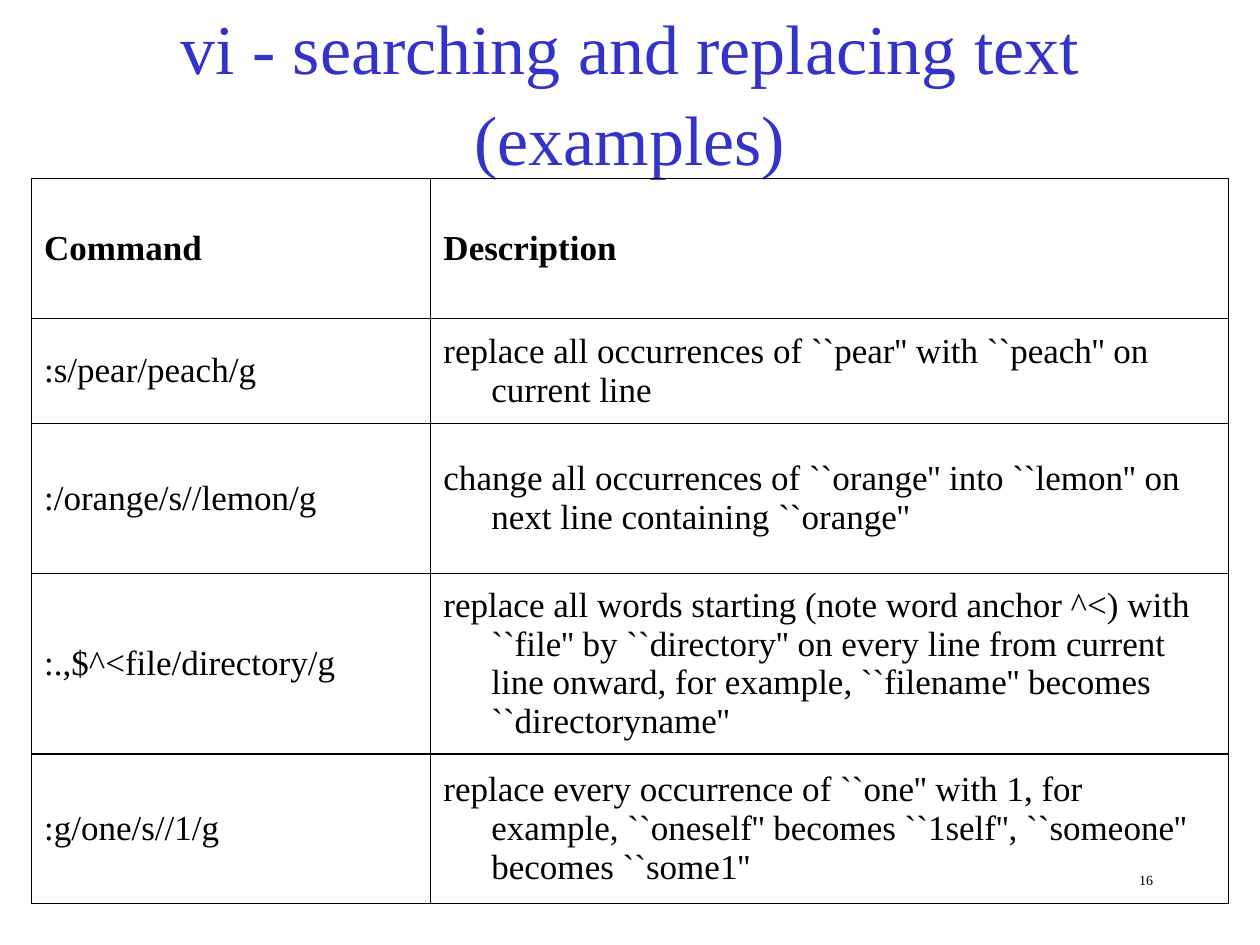
from dataclasses import dataclass

from lxml import etree
from pptx import Presentation
from pptx.dml.color import RGBColor
from pptx.enum import text
from pptx.oxml import ns
from pptx.util import Inches, Pt


@dataclass(frozen=True)
class Theme:
    font: str = "Times New Roman"
    ink: str = "000000"
    heading: str = "3333CC"
    title_size: float = 40
    body_size: float = 20
    number_size: float = 8
    border_width: float = 0.75


THEME = Theme()
COLUMNS = (3.17, 6.33)
ROW_HEIGHTS = (1.11, 0.83, 1.19, 1.39, 1.19)
COMMANDS = (
    ("Command", "Description"),
    (":s/pear/peach/g",
     "replace all occurrences of ``pear'' with ``peach'' on current line"),
    (":/orange/s//lemon/g",
     "change all occurrences of ``orange'' into ``lemon'' on next line "
     "containing ``orange''"),
    (":.,$^<file/directory/g",
     "replace all words starting (note word anchor ^<) with ``file'' by "
     "``directory'' on every line from current line onward, for example, "
     "``filename'' becomes ``directoryname''"),
    (":g/one/s//1/g",
     "replace every occurrence of ``one'' with 1, for example, ``oneself'' "
     "becomes ``1self'', ``someone'' becomes ``some1''"),
)


def write(frame, words, size, color, align, bold=False):
    frame.text = words
    frame.word_wrap = True
    para = frame.paragraphs[0]
    para.alignment = align
    font = para.runs[0].font
    font.name, font.size, font.bold = THEME.font, Pt(size), bold
    font.color.rgb = RGBColor.from_string(color)
    return para


def add_title(page, left, top, width, height):
    title = page.shapes.title
    title.left, title.top = Inches(left), Inches(top)
    title.width, title.height = Inches(width), Inches(height)
    para = write(title.text_frame, "vi - searching and replacing text (examples)",
                 THEME.title_size, THEME.heading, text.PP_ALIGN.CENTER)
    para.line_spacing = 1.08
    title.text_frame.auto_size = text.MSO_AUTO_SIZE.NONE
    title.text_frame.vertical_anchor = text.MSO_ANCHOR.MIDDLE


def add_page_number(page, left, top, width, height):
    box = page.shapes.add_textbox(Inches(left), Inches(top),
                                  Inches(width), Inches(height))
    box.text_frame.margin_top = Inches(0.09)
    write(box.text_frame, "16", THEME.number_size, THEME.ink,
          text.PP_ALIGN.RIGHT)


def set_borders(cell):
    properties = cell._tc.get_or_add_tcPr()
    for position, side in enumerate(("lnL", "lnR", "lnT", "lnB")):
        line = etree.Element(ns.qn(f"a:{side}"), w=str(Pt(THEME.border_width)))
        fill = etree.SubElement(line, ns.qn("a:solidFill"))
        etree.SubElement(fill, ns.qn("a:srgbClr"), val=THEME.ink)
        properties.insert(position, line)


def add_command_table(page, left, top, width, height):
    table = page.shapes.add_table(len(COMMANDS), len(COLUMNS), Inches(left),
                                  Inches(top), Inches(width), Inches(height)).table
    table.horz_banding = False
    for column, column_width in zip(table.columns, COLUMNS):
        column.width = Inches(column_width)
    for row, row_height in zip(table.rows, ROW_HEIGHTS):
        row.height = Inches(row_height)
    for row_index, entries in enumerate(COMMANDS):
        for column_index, words in enumerate(entries):
            cell = table.cell(row_index, column_index)
            cell.fill.background()
            cell.vertical_anchor = text.MSO_ANCHOR.MIDDLE
            para = write(cell.text_frame, words, THEME.body_size, THEME.ink,
                         text.PP_ALIGN.LEFT, bold=row_index == 0)
            indent = Inches(0.38)
            layout = para._p.get_or_add_pPr()
            layout.set("marL", str(indent))
            layout.set("indent", str(-indent))
            set_borders(cell)


def main():
    deck = Presentation()
    deck.slide_width, deck.slide_height = Inches(10), Inches(7.5)
    page = deck.slides.add_slide(deck.slide_layouts[5])
    add_page_number(page, 7.17, 6.83, 2.08, 0.5)
    add_command_table(page, 0.25, 1.42, sum(COLUMNS), sum(ROW_HEIGHTS))
    add_title(page, 0.75, 0.08, 8.5, 1.25)
    deck.save("out.pptx")


if __name__ == "__main__":
    main()
